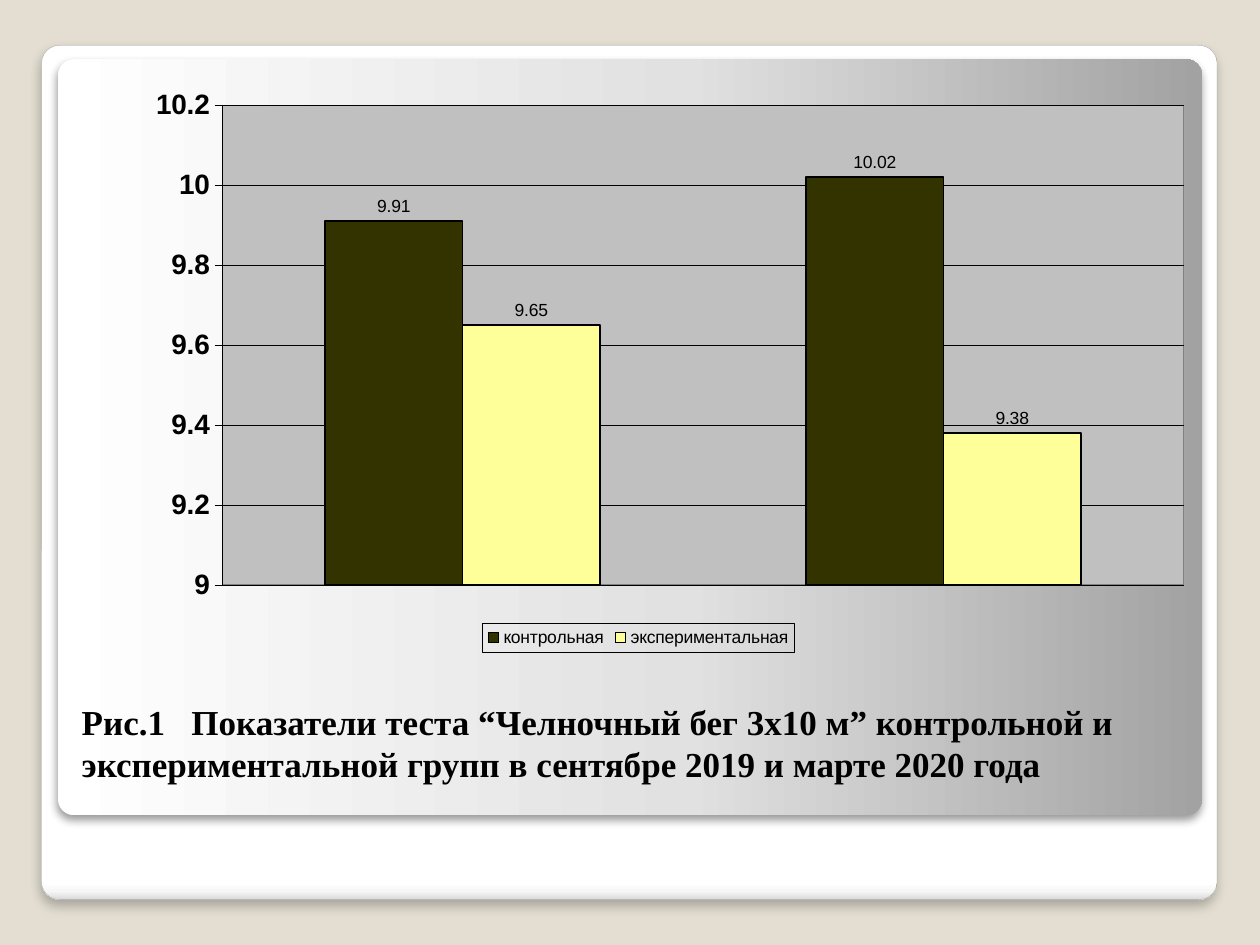
from dataclasses import dataclass

from lxml.etree import SubElement
from pptx import Presentation
from pptx.chart.chart import Chart
from pptx.chart.data import CategoryChartData
from pptx.dml.color import RGBColor
from pptx.enum.chart import XL_CHART_TYPE as ChartType
from pptx.enum.chart import XL_LABEL_POSITION as LabelPosition
from pptx.enum.chart import XL_LEGEND_POSITION as LegendPosition
from pptx.enum.chart import XL_TICK_MARK as TickMark
from pptx.enum.shapes import MSO_SHAPE as Preset
from pptx.enum.text import MSO_ANCHOR as Anchor
from pptx.oxml.ns import qn
from pptx.slide import Slide
from pptx.util import Inches, Pt

COLORS = {
    "background": "E3DED1",
    "black": "000000",
    "frame line": "A4A4A3",
    "plot": "C0C0C0",
    "plot line": "808080",
    "control": "333300",
    "experimental": "FFFF99",
}
CAPTION = (
    "Рис.1   Показатели теста “Челночный бег 3х10 м” контрольной и "
    "экспериментальной групп в сентябре 2019 и марте 2020 года"
)


@dataclass(frozen=True)
class Panel:
    """A rounded gradient panel with a soft shadow."""

    box: tuple[float, float, float, float]
    stops: tuple[tuple[int, str], ...]
    angle: int
    shadow_alpha: int
    blur: float
    distance: float
    line: str | None = None


@dataclass(frozen=True)
class Group:
    """One test group with its bar colour and results."""

    name: str
    color: str
    results: tuple[float, float]


PANELS = (
    Panel((0.33, 0.36, 9.33, 6.78),
          ((0, "FFFFFF"), (98, "FFFFFF"), (99, "F7F7F7"), (100, "DADADA")),
          270, 25, 6, 4, "frame line"),
    Panel((0.46, 0.47, 9.08, 6),
          ((0, "FFFFFF"), (55, "E1E1E1"), (100, "A2A2A2")),
          0, 40, 5.2, 3),
)
GROUPS = (
    Group("контрольная", "control", (9.91, 10.02)),
    Group("экспериментальная", "experimental", (9.65, 9.38)),
)


def rgb(name: str) -> RGBColor:
    """Return the named colour."""
    return RGBColor.from_string(COLORS[name])


def set_line(line, color: str, width: float) -> None:
    """Give a line its colour and width in points."""
    line.color.rgb = rgb(color)
    line.width = Pt(width)


def set_font(font, name: str, size: float, bold: bool = False) -> None:
    """Give a font its face, size, weight and black colour."""
    font.name = name
    font.size = Pt(size)
    font.bold = bold
    font.color.rgb = rgb("black")


def add_color(parent, value: str):
    """Append a hex colour element."""
    return SubElement(parent, qn("a:srgbClr"), val=value)


def add_panel(slide: Slide, panel: Panel) -> None:
    """Draw a rounded panel with its gradient, line and shadow."""
    shape = slide.shapes.add_shape(Preset.ROUNDED_RECTANGLE, *map(Inches, panel.box))
    shape.adjustments[0] = 0.021
    shape.fill.gradient()
    shape.fill.gradient_angle = panel.angle
    properties = shape._element.spPr
    stop_list = properties.find(".//" + qn("a:gsLst"))
    for stop in list(stop_list):
        stop_list.remove(stop)
    for position, color in panel.stops:
        add_color(SubElement(stop_list, qn("a:gs"), pos=str(position * 1000)), color)
    if panel.line:
        set_line(shape.line, panel.line, 0.17)
    else:
        shape.line.fill.background()
    shape.shadow.inherit = False
    shadow = SubElement(
        properties.find(qn("a:effectLst")), qn("a:outerShdw"),
        blurRad=str(Pt(panel.blur)), dist=str(Pt(panel.distance)),
        dir="5400000", rotWithShape="0",
    )
    color = add_color(shadow, COLORS["black"])
    SubElement(color, qn("a:alpha"), val=str(panel.shadow_alpha * 1000))


def add_caption(slide: Slide) -> None:
    """Write the figure caption under the chart."""
    box = slide.shapes.add_textbox(*map(Inches, (0.55, 5.45, 8.95, 1.15)))
    frame = box.text_frame
    frame.word_wrap = True
    frame.vertical_anchor = Anchor.BOTTOM
    frame.margin_bottom = Inches(0.37)
    run = frame.paragraphs[0].add_run()
    run.text = CAPTION
    set_font(run.font, "Times New Roman", 20, True)


def format_plot_area(chart: Chart) -> None:
    """Place the plot area and give it its fill and border."""
    area = chart._chartSpace.chart.plotArea
    for old in area.findall(qn("c:layout")):
        area.remove(old)
    layout = area.makeelement(qn("c:layout"), {})
    area.insert(0, layout)
    manual = SubElement(layout, qn("c:manualLayout"))
    settings = (("layoutTarget", "inner"), ("xMode", "edge"), ("yMode", "edge"),
                ("x", "0.131"), ("y", "0.051"), ("w", "0.853"), ("h", "0.832"))
    for tag, value in settings:
        SubElement(manual, qn(f"c:{tag}"), val=value)
    properties = SubElement(area, qn("c:spPr"))
    add_color(SubElement(properties, qn("a:solidFill")), COLORS["plot"])
    add_outline(properties, "plot line", 0.5)


def add_outline(properties, color: str, width: float) -> None:
    """Append an outline to chart part properties."""
    line = SubElement(properties, qn("a:ln"), w=str(Pt(width)))
    add_color(SubElement(line, qn("a:solidFill")), COLORS[color])


def add_results_chart(slide: Slide) -> None:
    """Draw the clustered columns of both groups."""
    data = CategoryChartData()
    data.categories = ["1", "2"]
    for group in GROUPS:
        data.add_series(group.name, group.results)
    chart = slide.shapes.add_chart(
        ChartType.COLUMN_CLUSTERED, *map(Inches, (0.59, 0.6, 8.95, 4.58)), data
    ).chart
    chart.has_title = False
    set_font(chart.font, "Arial", 10)
    chart.category_axis.visible = False

    axis = chart.value_axis
    axis.minimum_scale, axis.maximum_scale, axis.major_unit = 9, 10.2, 0.2
    axis.major_tick_mark = TickMark.OUTSIDE
    axis.minor_tick_mark = TickMark.NONE
    axis.tick_labels.number_format = "General"
    axis.tick_labels.number_format_is_linked = False
    set_font(axis.tick_labels.font, "Arial", 16, True)
    set_line(axis.format.line, "black", 0.25)
    set_line(axis.major_gridlines.format.line, "black", 0.25)

    plot = chart.plots[0]
    plot.gap_width, plot.overlap = 150, 0
    plot.vary_by_categories = False
    for series, group in zip(plot.series, GROUPS):
        series.format.fill.solid()
        series.format.fill.fore_color.rgb = rgb(group.color)
        set_line(series.format.line, "black", 1)
        labels = series.data_labels
        labels.show_value = True
        labels.position = LabelPosition.OUTSIDE_END
        set_font(labels.font, "Arial", 10)

    format_plot_area(chart)
    chart.has_legend = True
    legend = chart.legend
    legend.position = LegendPosition.BOTTOM
    legend.include_in_layout = False
    properties = legend._element.makeelement(qn("c:spPr"), {})
    legend._element.find(qn("c:overlay")).addnext(properties)
    SubElement(properties, qn("a:noFill"))
    add_outline(properties, "black", 0.25)
    set_font(legend.font, "Arial", 10)


def main() -> None:
    """Build and save the slide."""
    presentation = Presentation()
    presentation.slide_width, presentation.slide_height = Inches(10), Inches(7.5)
    slide = presentation.slides.add_slide(presentation.slide_layouts[6])
    slide.background.fill.solid()
    slide.background.fill.fore_color.rgb = rgb("background")
    for panel in PANELS:
        add_panel(slide, panel)
    add_caption(slide)
    add_results_chart(slide)
    presentation.save("out.pptx")


if __name__ == "__main__":
    main()
